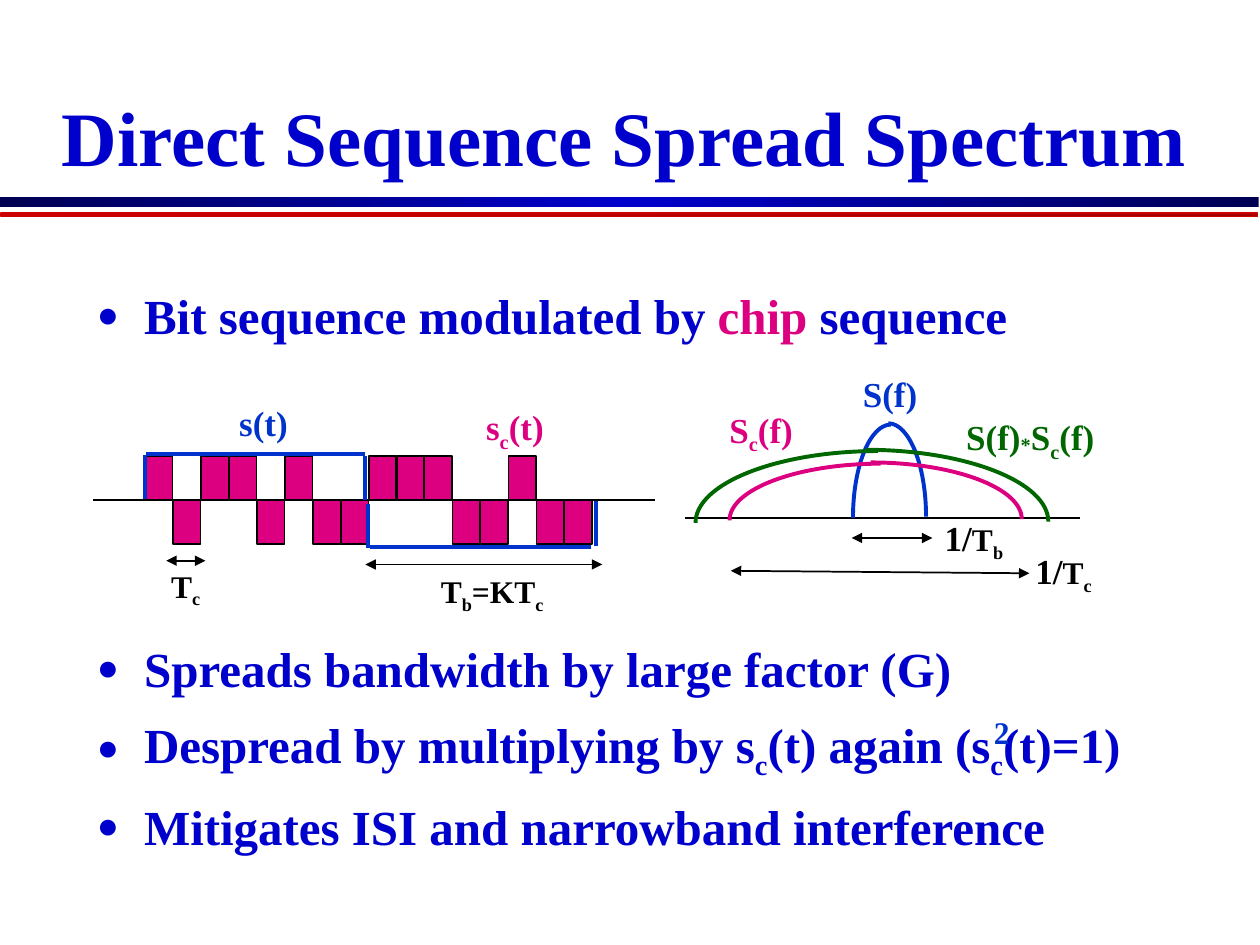
from copy import deepcopy

from pptx import Presentation
from pptx.dml.color import RGBColor
from pptx.enum.shapes import MSO_CONNECTOR as CONN, MSO_SHAPE as SHAPE
from pptx.enum.text import MSO_ANCHOR as ANCHOR, MSO_AUTO_SIZE as AUTO, PP_ALIGN as ALIGN
from pptx.oxml.ns import qn
from pptx.oxml.xmlchemy import OxmlElement
from pptx.util import Inches, Pt

FONT = "Times New Roman"
NAVY = RGBColor(0x00, 0x00, 0x52)
BLUE = RGBColor(0x00, 0x00, 0xCC)
BIT_BLUE = RGBColor(0x00, 0x33, 0xCC)
PINK = RGBColor(0xDC, 0x00, 0x81)
GREEN = RGBColor(0x00, 0x66, 0x00)
RED = RGBColor(0xCC, 0x00, 0x00)
DARK_RED = RGBColor(0xA3, 0x00, 0x00)
BLACK = RGBColor(0x00, 0x00, 0x00)

# Content: a run is (text, options); SUB marks a subscript
SUB = {"base": -25}
SMALL = {"size": 18}
SMALL_SUB = {"size": 18, "base": -25}
TITLE = "Direct Sequence Spread Spectrum"
BULLETS = [  # space before in points, runs
    (6.5, [("Bit sequence modulated by ", {}), ("chip", {"color": PINK}), (" sequence", {})]),
    (165, [("Spreads bandwidth by large factor (G)", {})]),
    (5.6, [("Despread by multiplying by s", {}), ("c", SUB), ("(t) again (s", {}),
           ("c", SUB), ("(t)=1)", {})]),
    (5.6, [("Mitigates ISI and narrowband interference", {})]),
]
LABELS = [  # left, top, width, height, colour, runs
    (1.8, 3.14, 0.59, 0.43, BIT_BLUE, [("s(t)", {})]),
    (3.76, 3.17, 0.66, 0.43, PINK, [("s", {}), ("c", SUB), ("(t)", {})]),
    (3.33, 4.46, 1.11, 0.43, BLACK,
     [(" ", {}), ("T", SMALL), ("b", SMALL_SUB), ("=KT", SMALL), ("c", SMALL_SUB)]),
    (1.19, 4.42, 0.51, 0.43, BLACK, [(" ", {}), ("T", SMALL), ("c", SMALL_SUB)]),
    (6.75, 2.91, 0.63, 0.43, BIT_BLUE, [("S(f)", {})]),
    (5.69, 3.19, 0.71, 0.43, PINK, [("S", {}), ("c", SUB), ("(f)", {})]),
    (7.33, 4.05, 0.74, 0.43, BLACK, [(" 1/", {}), ("T", SMALL), ("b", SMALL_SUB)]),
    (8.05, 4.31, 0.73, 0.43, BLACK, [(" 1/", {}), ("T", SMALL), ("c", SMALL_SUB)]),
    (7.57, 3.25, 1.23, 0.43, GREEN,
     [("S(f)", {}), ("*", {"base": -4}), ("S", {}), ("c", SUB), ("(f)", {})]),
    (7.79, 5.61, 0.33, 0.4, BIT_BLUE, [("2", SMALL)]),
]
CHIPS = "+-++-+--+++--+--"
CHIP_LEFT, CHIP_PITCH, CHIP_W, CHIP_H = 1.15, 0.222, 0.22, 0.35
TIME_AXIS = 3.97
AXES = [(0.74, TIME_AXIS, 5.2, TIME_AXIS), (5.44, 4.11, 8.57, 4.11)]
BIT_EDGES = [
    (1.16, 3.6, 2.9, 3.6), (1.15, 3.61, 1.15, 3.96), (2.9, 3.62, 2.9, 3.97),
    (2.94, 4.34, 4.69, 4.34), (4.73, 3.98, 4.73, 4.33), (2.92, 4, 2.92, 4.35),
]
SPANS = [(2.9, 4.48, 4.78, 4.48), (1.32, 4.45, 1.63, 4.45),
         (6.76, 4.27, 7.4, 4.27), (5.8, 4.53, 8.17, 4.55)]
QUARTERS = [  # peak x, peak y, signed width, height, colour
    (7.05, 3.36, 0.3, 0.74, BIT_BLUE), (7.07, 3.37, -0.3, 0.74, BIT_BLUE),
    (6.91, 3.67, 1.2, 0.45, PINK), (6.99, 3.68, -1.2, 0.45, PINK),
    (6.87, 3.57, 1.45, 0.57, GREEN), (6.97, 3.58, -1.45, 0.57, GREEN),
]
QUARTER_BEND = 0.55  # control length of a quarter ellipse

prs = Presentation()
prs.slide_width, prs.slide_height = Inches(10), Inches(7.5)
slide = prs.slides.add_slide(prs.slide_layouts[6])
shapes = slide.shapes


def add_runs(p, runs, size, color):
    for text, opts in runs:
        r = p.add_run()
        r.text = text
        r.font.name, r.font.bold = FONT, True
        r.font.size = Pt(opts.get("size", size))
        r.font.color.rgb = opts.get("color", color)
        if "base" in opts:
            r._r.get_or_add_rPr().set("baseline", str(opts["base"] * 1000))


def add_text(box, wrap):
    tf = shapes.add_textbox(*map(Inches, box)).text_frame
    tf.word_wrap = wrap
    tf.auto_size = AUTO.NONE if wrap else AUTO.SHAPE_TO_FIT_TEXT
    return tf


def make(tag, **attrs):
    el = OxmlElement(tag)
    for name, value in attrs.items():
        el.set(name, value)
    return el


def add_bullet(p):
    pPr = p._p.get_or_add_pPr()
    pPr.set("marL", str(Inches(0.375)))
    pPr.set("indent", str(-Inches(0.375)))
    color = make("a:buClr")
    color.append(make("a:srgbClr", val=str(BLUE)))
    pPr.extend([color, make("a:buSzPct", val="75000"),
                make("a:buFont", typeface=FONT), make("a:buChar", char="●")])


def add_rect(*box):
    s = shapes.add_shape(SHAPE.RECTANGLE, *map(Inches, box))
    s.shadow.inherit = False
    return s


def add_band(box, colors):
    s = add_rect(*box)
    s.line.fill.background()
    s.fill.gradient()
    s.fill.gradient_angle = 0
    stops = s._element.spPr.find(".//" + qn("a:gsLst"))
    while len(stops) < len(colors):
        stops.append(deepcopy(stops[-1]))
    for i, (stop, color) in enumerate(zip(s.fill.gradient_stops, colors)):
        stop.position = i / (len(colors) - 1)
        stop.color.rgb = color
    return s


def add_line(ends, color=BLACK, width=1, arrows=False):
    c = shapes.add_connector(CONN.STRAIGHT, *map(Inches, ends))
    c.line.color.rgb, c.line.width = color, Pt(width)
    if arrows:
        for tag in ("a:headEnd", "a:tailEnd"):
            c.line._get_or_add_ln().append(make(tag, type="triangle"))
    c._element.spPr.append(make("a:effectLst"))


def add_quarter(x, y, w, h, color):
    points = [(x + w * QUARTER_BEND, y), (x + w, y + h * (1 - QUARTER_BEND)), (x + w, y + h)]
    builder = shapes.build_freeform(Inches(x), Inches(y))
    builder.add_line_segments([(Inches(px), Inches(py)) for px, py in points], close=False)
    s = builder.convert_to_shape()
    # Turn the three segments into one Bezier curve
    outline = s._element.spPr.find(".//" + qn("a:path"))
    curve = make("a:cubicBezTo")
    for segment in outline.findall(qn("a:lnTo")):
        curve.append(segment[0])
        outline.remove(segment)
    outline.append(curve)
    s.shadow.inherit = False
    s.fill.background()
    s.line.color.rgb, s.line.width = color, Pt(2.25)


# Title and the bands under it
add_band((0, 1.56, 9.99, 0.08), [NAVY, BLUE, NAVY])
red_band = add_band((0.01, 1.69, 9.97, 0.03), [RED, DARK_RED])
red_band.line.color.rgb, red_band.line.width = RED, Pt(1)
tf = add_text((0.3, 0.24, 9.31, 1.25), True)
tf.vertical_anchor = ANCHOR.BOTTOM
p = tf.paragraphs[0]
p.alignment, p.line_spacing = ALIGN.CENTER, 0.8
add_runs(p, [(TITLE, {})], 44, BLUE)

# Bullets, with room for the diagrams after the first
tf = add_text((0.67, 2.17, 8.58, 4.5), True)
for i, (gap, runs) in enumerate(BULLETS):
    p = tf.add_paragraph() if i else tf.paragraphs[0]
    p.line_spacing, p.space_before = 1.1, Pt(gap)
    add_bullet(p)
    add_runs(p, runs, 28, BLUE)

# Axes, chips and bit waveform
for ends in AXES:
    add_line(ends)
for i, sign in enumerate(CHIPS):
    top = TIME_AXIS - CHIP_H if sign == "+" else TIME_AXIS
    chip = add_rect(CHIP_LEFT + i * CHIP_PITCH, top, CHIP_W, CHIP_H)
    chip.fill.solid()
    chip.fill.fore_color.rgb = PINK
    chip.line.color.rgb, chip.line.width = BLACK, Pt(1)
for ends in BIT_EDGES:
    add_line(ends, BIT_BLUE, 2.25)

# Spectra, dimension arrows and labels
for quarter in QUARTERS:
    add_quarter(*quarter)
for ends in SPANS:
    add_line(ends, arrows=True)
for *box, color, runs in LABELS:
    add_runs(add_text(box, False).paragraphs[0], runs, 20, color)

prs.save("out.pptx")
